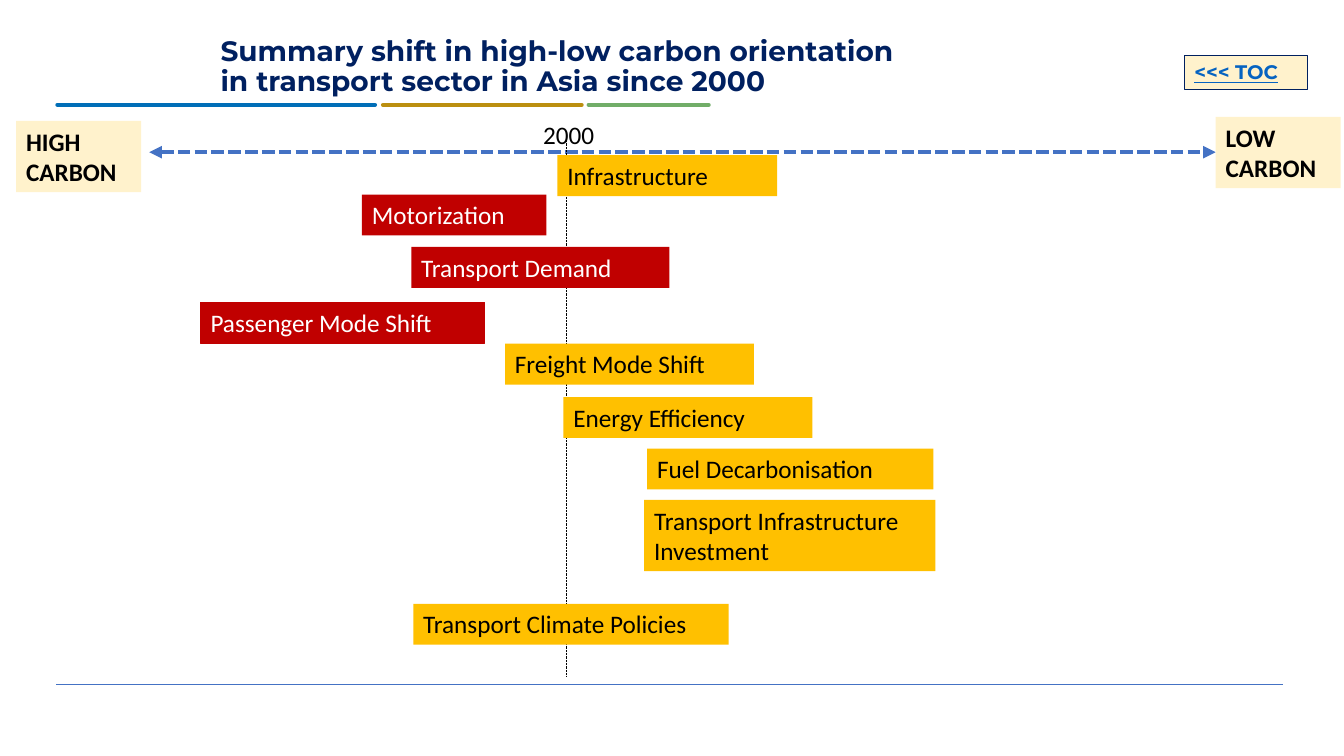
from dataclasses import dataclass
from typing import Optional

from lxml import etree
from pptx import Presentation
from pptx.dml.color import RGBColor
from pptx.enum.dml import MSO_LINE
from pptx.enum.shapes import MSO_CONNECTOR, MSO_SHAPE
from pptx.enum.text import MSO_ANCHOR, MSO_AUTO_SIZE, PP_ALIGN
from pptx.oxml.ns import qn
from pptx.slide import Slide
from pptx.util import Inches, Pt

STRAIGHT = MSO_CONNECTOR.STRAIGHT
RECTANGLE = MSO_SHAPE.RECTANGLE
SQUARE_DASH = MSO_LINE.SQUARE_DOT
ROUND_DOT = MSO_LINE.ROUND_DOT
TOP, MIDDLE = MSO_ANCHOR.TOP, MSO_ANCHOR.MIDDLE
LEFT = PP_ALIGN.LEFT
FIT_SHAPE = MSO_AUTO_SIZE.SHAPE_TO_FIT_TEXT
FIT_NONE = MSO_AUTO_SIZE.NONE

COLORS = {
    "navy": "002060", "blue": "4472C4", "deep_blue": "006EB7",
    "ochre": "BB8F10", "green": "71AD68", "cream": "FFF2CC",
    "red": "C00000", "amber": "FFC000", "link": "0563C1",
    "black": "000000", "white": "FFFFFF",
}
COLUMNS, ROWS = 133.33, 75
SLIDE_WIDTH, SLIDE_HEIGHT = Inches(13.33), Inches(7.5)
BAR_HEIGHT, TALL_HEIGHT = 4.05, 7.07
AXIS_ROW, RULE_ROW, YEAR_COLUMN = 15.1, 10.4, 56.2


@dataclass(frozen=True)
class Rule:
    start: tuple[float, float]
    end: tuple[float, float]
    color: str
    weight: float
    dash: Optional[MSO_LINE] = None
    arrows: bool = False
    rounded: bool = False


@dataclass(frozen=True)
class Label:
    text: str
    left: float
    top: float
    width: float
    height: float = BAR_HEIGHT
    fill: Optional[str] = None
    outline: Optional[str] = None
    color: str = "black"
    font: str = "Calibri"
    size: int = 18
    bold: bool = False
    underline: bool = False
    anchor: MSO_ANCHOR = TOP
    fit: MSO_AUTO_SIZE = FIT_SHAPE
    line_spacing: float = 1.0


def column(count: float) -> int:
    return round(SLIDE_WIDTH * count / COLUMNS)


def row(count: float) -> int:
    return round(SLIDE_HEIGHT * count / ROWS)


def rgb(name: str) -> RGBColor:
    return RGBColor.from_string(COLORS[name])


def draw_rule(slide: Slide, rule: Rule) -> None:
    connector = slide.shapes.add_connector(
        STRAIGHT, column(rule.start[0]), row(rule.start[1]),
        column(rule.end[0]), row(rule.end[1]))
    connector.line.color.rgb = rgb(rule.color)
    connector.line.width = Pt(rule.weight)
    if rule.dash is not None:
        connector.line.dash_style = rule.dash
    properties = connector.line._get_or_add_ln()
    if rule.rounded:
        properties.set("cap", "rnd")
    if rule.arrows:
        for tag in ("a:headEnd", "a:tailEnd"):
            etree.SubElement(properties, qn(tag), type="triangle")
    etree.SubElement(connector._element.spPr, qn("a:effectLst"))


def draw_label(slide: Slide, label: Label) -> None:
    box = (column(label.left), row(label.top),
           column(label.width), row(label.height))
    if label.fill is None:
        shape = slide.shapes.add_textbox(*box)
    else:
        shape = slide.shapes.add_shape(RECTANGLE, *box)
        shape.shadow.inherit = False
        shape.fill.solid()
        shape.fill.fore_color.rgb = rgb(label.fill)
        if label.outline is None:
            shape.line.fill.background()
        else:
            shape.line.color.rgb = rgb(label.outline)
            shape.line.width = Pt(0.75)
    frame = shape.text_frame
    frame.text = label.text
    frame.word_wrap = True
    frame.auto_size = label.fit
    frame.vertical_anchor = label.anchor
    paragraph = frame.paragraphs[0]
    paragraph.alignment = LEFT
    paragraph.line_spacing = label.line_spacing
    font = paragraph.runs[0].font
    font.name, font.size = label.font, Pt(label.size)
    font.bold, font.underline = label.bold, label.underline
    font.color.rgb = rgb(label.color)


def heading_rule(start: float, end: float, color: str) -> Rule:
    return Rule((start, RULE_ROW), (end, RULE_ROW), color, 3, rounded=True)


def high_carbon_bar(text: str, left: float, top: float, width: float,
                    outline: Optional[str] = None) -> Label:
    return Label(text, left, top, width, fill="red", color="white",
                 outline=outline)


def low_carbon_bar(text: str, left: float, top: float, width: float,
                   height: float = BAR_HEIGHT) -> Label:
    return Label(text, left, top, width, height, fill="amber")


def axis_end(text: str, left: float, top: float) -> Label:
    return Label(text, left, top, 12.4, TALL_HEIGHT, fill="cream", bold=True)


ELEMENTS: list[Rule | Label] = [
    Rule((5.6, 67.9), (127.3, 67.9), "blue", 0.5),
    heading_rule(5.7, 37.2, "deep_blue"),
    heading_rule(38, 57.7, "ochre"),
    heading_rule(58.4, 70.3, "green"),
    Label("Summary shift in high-low carbon orientation in transport sector "
          "in Asia since 2000", 20.9, 2.4, 71.4, 8.6, color="navy",
          font="Montserrat", size=20, bold=True, anchor=MIDDLE,
          fit=FIT_NONE, line_spacing=0.9),
    Rule((14.8, AXIS_ROW), (120.6, AXIS_ROW), "blue", 3, SQUARE_DASH,
         arrows=True),
    axis_end("HIGH CARBON", 1.6, 12),
    axis_end("LOW CARBON", 120.6, 11.6),
    Rule((YEAR_COLUMN, 13.3), (YEAR_COLUMN, 67.1), "black", 0.5, ROUND_DOT),
    low_carbon_bar("Infrastructure", 55.3, 15.4, 21.8),
    high_carbon_bar("Motorization", 35.9, 19.3, 18.3),
    high_carbon_bar("Transport Demand", 40.8, 24.5, 25.6),
    high_carbon_bar("Passenger Mode Shift", 19.9, 30, 28.2, "red"),
    low_carbon_bar("Freight Mode Shift", 50.1, 34.1, 24.7),
    low_carbon_bar("Energy Efficiency", 55.9, 39.4, 24.7),
    low_carbon_bar("Fuel Decarbonisation", 64.2, 44.5, 28.4),
    low_carbon_bar("Transport Infrastructure Investment", 63.9, 49.6, 28.9,
                   TALL_HEIGHT),
    low_carbon_bar("Transport Climate Policies", 41, 59.9, 31.3),
    Label("2000", 52.9, 11.3, 8.6),
    Label("<<< TOC", 117.5, 5.5, 12.2, 3.4, fill="cream", outline="navy",
          color="link", font="Montserrat", size=14, bold=True,
          underline=True),
]


def main() -> None:
    presentation = Presentation()
    presentation.slide_width = SLIDE_WIDTH
    presentation.slide_height = SLIDE_HEIGHT
    slide = presentation.slides.add_slide(presentation.slide_layouts[6])
    for element in ELEMENTS:
        if isinstance(element, Rule):
            draw_rule(slide, element)
        else:
            draw_label(slide, element)
    presentation.save("out.pptx")


if __name__ == "__main__":
    main()
